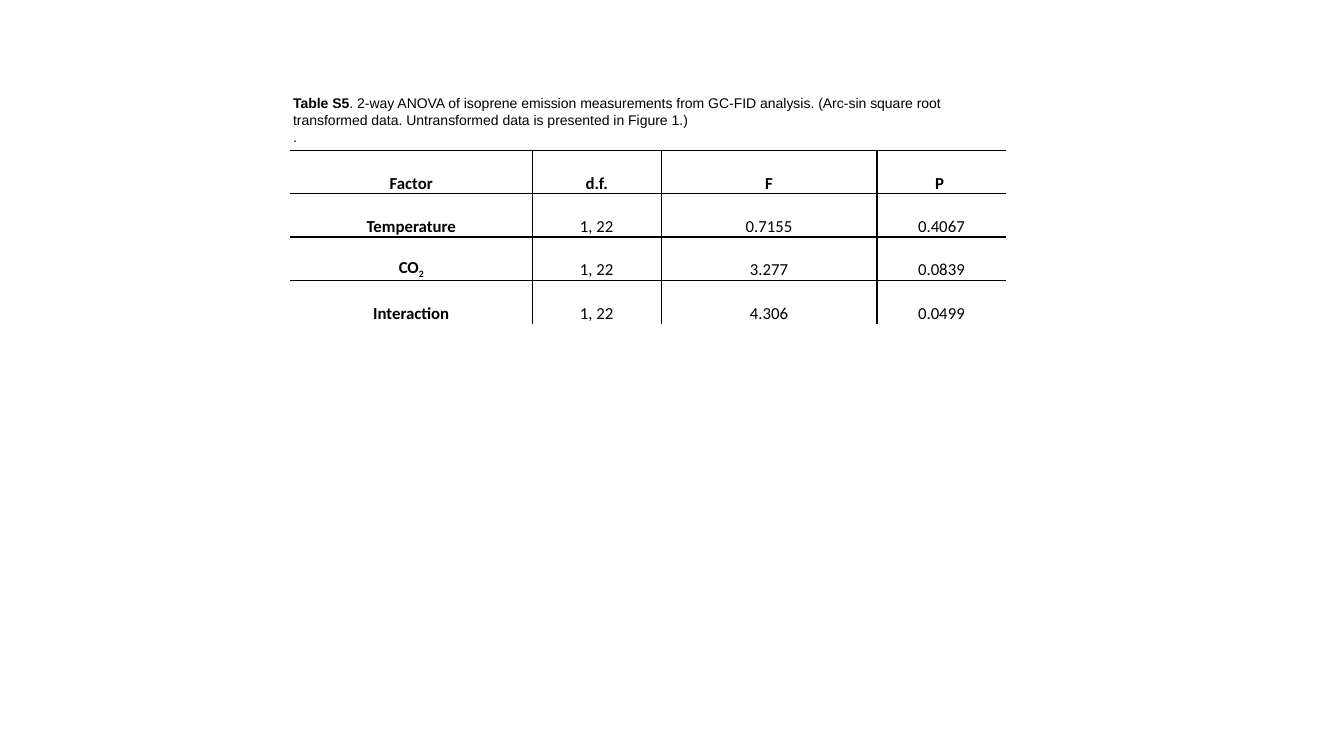
import dataclasses

import pptx
import pptx.dml.color
import pptx.enum.text
import pptx.oxml
import pptx.oxml.ns
import pptx.util

Pt = pptx.util.Pt
PP_ALIGN = pptx.enum.text.PP_ALIGN
MSO_ANCHOR = pptx.enum.text.MSO_ANCHOR


@dataclasses.dataclass(frozen=True)
class Theme:
    ink: str = "000000"
    caption_font: str = "Arial"
    caption_size: float = 10
    table_font: str = "Calibri"
    table_size: float = 12
    rule_width: float = 1


THEME = Theme()

CAPTION = [
    [("Table S5", True),
     (". 2-way ANOVA of isoprene emission measurements from GC-FID analysis. "
      "(Arc-sin square root transformed data. Untransformed data is presented in Figure 1.)", False)],
    [(".", False)],
]
COLUMN_WIDTHS = [172.8, 92.16, 154.08, 92.16]
ROW_HEIGHT = 30.96
ANOVA = [
    ["Factor", "d.f.", "F", "P "],
    ["Temperature", "1, 22", "0.7155", "0.4067"],
    ["CO2", "1, 22", "3.277", "0.0839"],
    ["Interaction", "1, 22", "4.306", "0.0499"],
]
SUBSCRIPTS = {"CO2": ("CO", "2")}


def set_attrs(obj, values):
    for name, value in values.items():
        setattr(obj, name, value)


def add_run(p, text, font, size, bold, baseline=0):
    r = p.add_run()
    r.text = text
    set_attrs(r.font, {"name": font, "size": Pt(size), "bold": bold})
    r.font.color.rgb = pptx.dml.color.RGBColor.from_string(THEME.ink)
    if baseline:
        r.font._element.set("baseline", str(baseline))


def add_caption(s, left, top, width, height):
    sp = s.shapes.add_textbox(Pt(left), Pt(top), Pt(width), Pt(height))
    tf = sp.text_frame
    set_attrs(tf, {"word_wrap": True,
                   "auto_size": pptx.enum.text.MSO_AUTO_SIZE.SHAPE_TO_FIT_TEXT})
    for i, runs in enumerate(CAPTION):
        p = tf.add_paragraph() if i else tf.paragraphs[0]
        for text, bold in runs:
            add_run(p, text, THEME.caption_font, THEME.caption_size, bold)


def set_borders(cell, sides):
    tc_pr = cell._tc.get_or_add_tcPr()
    ns = pptx.oxml.ns.nsdecls("a")
    for i, (side, ruled) in enumerate(sides.items()):
        fill = (f'<a:solidFill><a:srgbClr val="{THEME.ink}"/></a:solidFill>'
                if ruled else "<a:noFill/>")
        tc_pr.insert(i, pptx.oxml.parse_xml(
            f'<a:ln{side} {ns} w="{Pt(THEME.rule_width)}">{fill}</a:ln{side}>'))


def fill_cell(cell, text, bold):
    set_attrs(cell, {"vertical_anchor": MSO_ANCHOR.BOTTOM,
                     "margin_left": Pt(0.72), "margin_right": Pt(0.72),
                     "margin_top": Pt(0.72), "margin_bottom": Pt(0)})
    cell.fill.background()
    p = cell.text_frame.paragraphs[0]
    p.alignment = PP_ALIGN.CENTER
    base, *subscript = SUBSCRIPTS.get(text, (text,))
    add_run(p, base, THEME.table_font, THEME.table_size, bold)
    for part in subscript:
        add_run(p, part, THEME.table_font, THEME.table_size, bold, -25000)


def add_anova_table(s, left, top):
    rows, cols = len(ANOVA), len(COLUMN_WIDTHS)
    table = s.shapes.add_table(rows, cols, Pt(left), Pt(top),
                               Pt(sum(COLUMN_WIDTHS)), Pt(rows * ROW_HEIGHT)).table
    set_attrs(table, {"first_row": False, "horz_banding": False})
    for column, width in zip(table.columns, COLUMN_WIDTHS):
        column.width = Pt(width)
    for i, values in enumerate(ANOVA):
        table.rows[i].height = Pt(ROW_HEIGHT)
        for j, text in enumerate(values):
            cell = table.cell(i, j)
            fill_cell(cell, text, i == 0 or j == 0)
            set_borders(cell, {"L": j > 0, "R": j < cols - 1,
                               "T": True, "B": i < rows - 1})


def main():
    prs = pptx.Presentation()
    set_attrs(prs, {"slide_width": Pt(960), "slide_height": Pt(540)})
    s = prs.slides.add_slide(prs.slide_layouts[6])
    add_caption(s, 202.32, 64.08, 515.52, 43.92)
    add_anova_table(s, 207.36, 107.4)
    prs.save("out.pptx")


if __name__ == "__main__":
    main()
